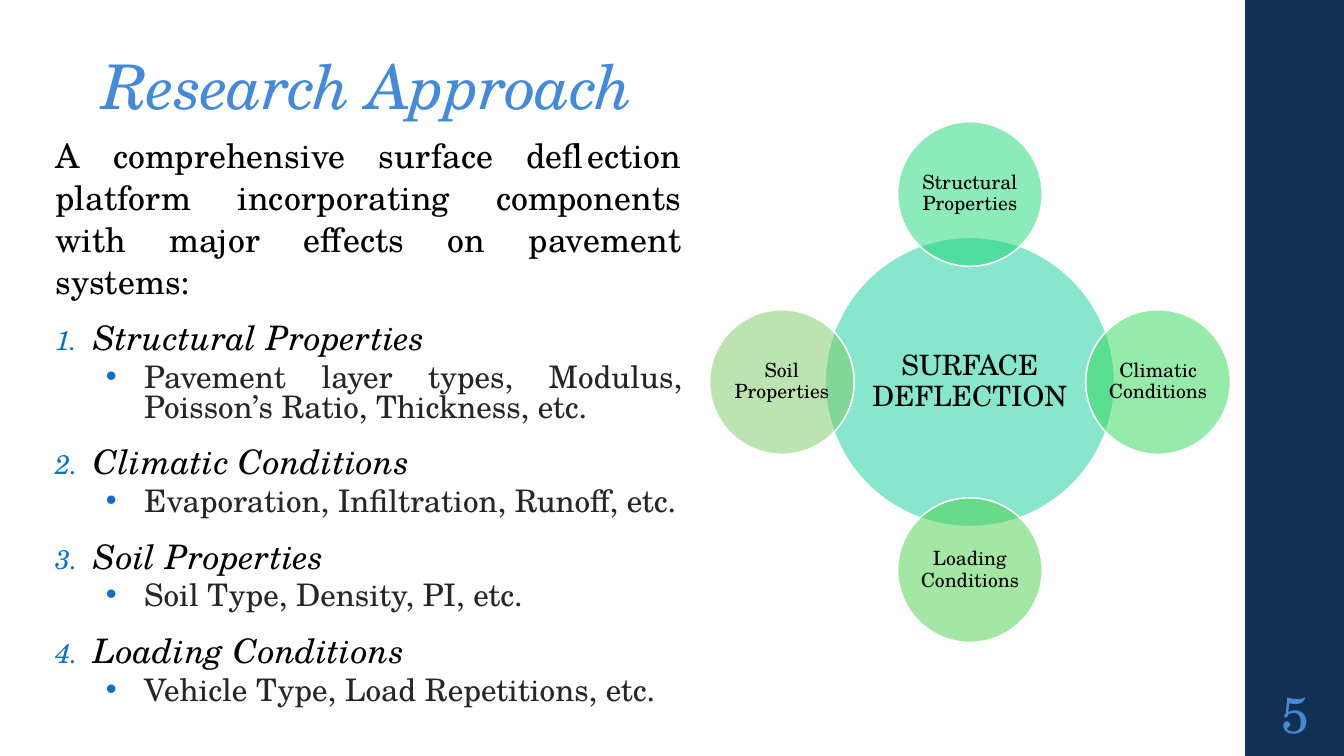
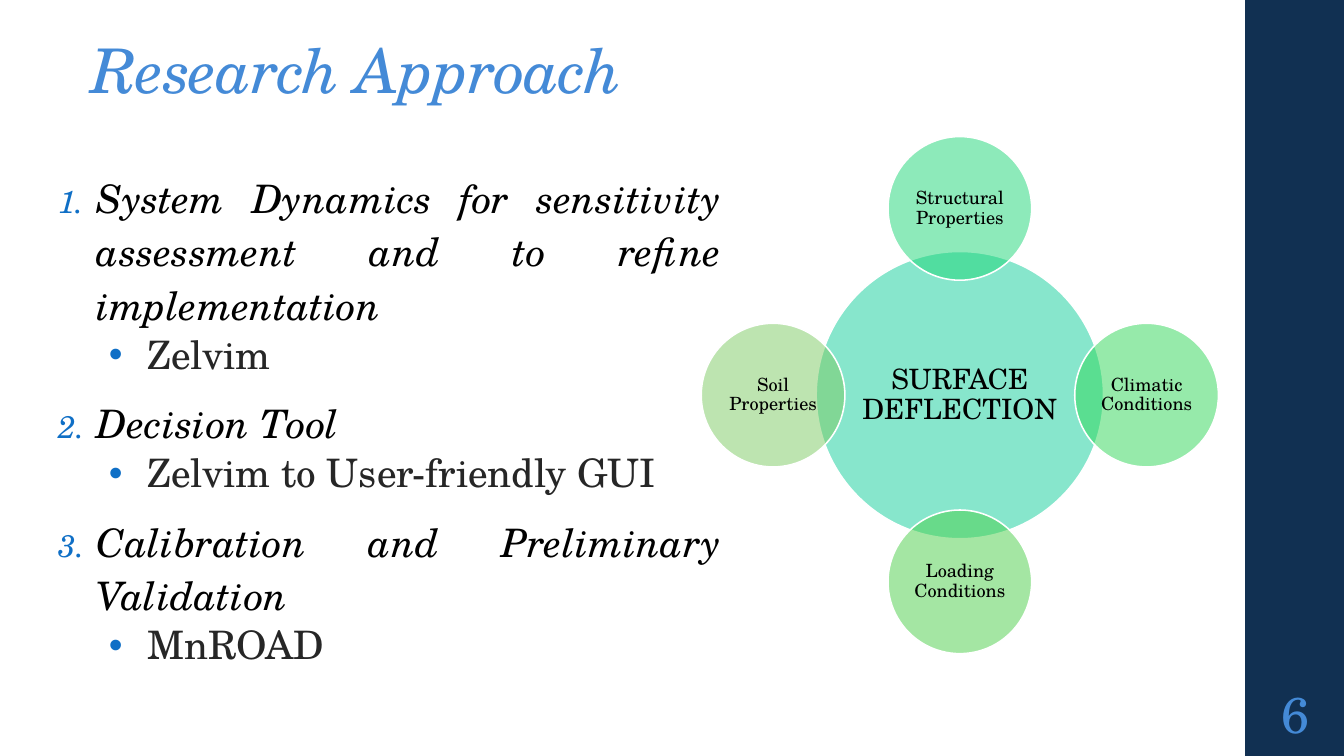
from dataclasses import dataclass
from lxml.etree import SubElement as Sub
from pptx import Presentation
from pptx.dml.color import RGBColor as RGB
from pptx.enum.shapes import MSO_SHAPE as Kind
from pptx.enum.text import MSO_ANCHOR as Anchor, MSO_AUTO_SIZE as Auto, PP_ALIGN as Align
from pptx.oxml.ns import qn
from pptx.util import Inches as In, Pt


@dataclass(frozen=True)
class Theme:
    font: str = "TeX Gyre Schola"
    band: str = "113052"
    title: str = "448AD7"
    mark: str = "0F6FC6"
    ink: str = "000000"
    soft: str = "262626"
    edge: str = "FFFFFF"
    head: float = 44
    page: float = 36
    hub: float = 20


T = Theme()
WIDE, HIGH, BAND = 13.33, 7.5, 12.35
HUB = ("SURFACE DEFLECTION", "10CF9B")
RING = [
    ("Structural Properties", "1CD676", 0, -1),
    ("Climatic Conditions", "2FD757", 1, 0),
    ("Loading Conditions", "4ACF49", 0, 1),
    ("Soil Properties", "7CCA62", -1, 0),
]
SLIDES = [
    dict(
        page="5", title="Research Approach", head=(0.92, 0.5, 5.75, 0.77),
        body=(0.45, 1.27, 6.42, 5.86), sizes=(24.1, 22.2), gaps=(1.04, 0.8),
        hub=(9.62, 3.79, 2.87), label=14,
        intro="A comprehensive surface deflection platform incorporating "
              "components with major effects on pavement systems:",
        items=[
            ("Structural Properties", "Pavement layer types, Modulus, Poisson’s Ratio, Thickness, etc."),
            ("Climatic Conditions", "Evaporation, Infiltration, Runoff, etc."),
            ("Soil Properties", "Soil Type, Density, PI, etc."),
            ("Loading Conditions", "Vehicle Type, Load Repetitions, etc."),
        ],
    ),
    dict(
        page="6", title="Research Approach", head=(0.81, 0.25, 5.75, 0.86),
        body=(0.48, 1.61, 6.78, 5.79), sizes=(28, 28), gaps=(1.14, 0.9),
        hub=(9.52, 3.92, 2.85), label=13, intro=None,
        items=[
            ("System Dynamics for sensitivity assessment and to refine implementation", "Zelvim"),
            ("Decision Tool", "Zelvim to User-friendly GUI"),
            ("Calibration and Preliminary Validation", "MnROAD"),
        ],
    ),
]


def place(shape, box):
    shape.left, shape.top, shape.width, shape.height = map(In, box)


def setup(frame, anchor, pad=None):
    frame.word_wrap = True
    frame.auto_size = Auto.NONE
    frame.vertical_anchor = anchor
    if pad is not None:
        frame.margin_left = frame.margin_right = In(pad)
        frame.margin_top = frame.margin_bottom = In(pad)


def write(para, text, size, color, slant=False, track=0):
    run = para.add_run()
    run.text = text
    font = run.font
    font.name, font.size, font.italic = T.font, Pt(size), slant
    font.color.rgb = RGB.from_string(color)
    if track:
        font._element.set("spc", str(round(track * 100)))


def paint(shape, color):
    shape.shadow.inherit = False
    shape.fill.solid()
    shape.fill.fore_color.rgb = RGB.from_string(color)
    shape.line.fill.background()


def mark(para, kind):
    props = para._p.get_or_add_pPr()
    left, hang = {"plain": (0, 0), "num": (0.38, -0.38), "dot": (0.88, -0.38)}[kind]
    props.set("marL", str(In(left)))
    props.set("indent", str(In(hang)))
    if kind == "plain":
        Sub(props, qn("a:buNone"))
        return
    Sub(Sub(props, qn("a:buClr")), qn("a:srgbClr"), val=T.mark)
    if kind == "num":
        Sub(props, qn("a:buSzPct"), val="80000")
        Sub(props, qn("a:buAutoNum"), type="arabicPeriod")
    else:
        Sub(props, qn("a:buFont"), typeface="Arial")
        Sub(props, qn("a:buChar"), char="•")


def fill(shape, data):
    place(shape, data["body"])
    frame = shape.text_frame
    setup(frame, Anchor.TOP)
    rows = [("plain", data["intro"])] if data["intro"] else []
    for name, note in data["items"]:
        rows += [("num", name), ("dot", note)]
    for i, (kind, text) in enumerate(rows):
        para = frame.add_paragraph() if i else frame.paragraphs[0]
        sub = kind == "dot"
        para.level = int(sub)
        para.alignment = Align.JUSTIFY
        para.line_spacing = data["gaps"][sub]
        para.space_before = Pt((3 if sub else 8) if i else 0)
        para.space_after = Pt(3 if sub else 2)
        mark(para, kind)
        write(para, text, data["sizes"][sub], T.soft if sub else T.ink,
              kind == "num", 0 if sub else 0.1)


def disc(slide, x, y, size, text, color, pt, pad):
    shape = slide.shapes.add_shape(
        Kind.OVAL, In(x - size / 2), In(y - size / 2), In(size), In(size))
    paint(shape, color)
    tint = shape.fill._xPr.find(qn("a:solidFill"))[0]
    Sub(tint, qn("a:alpha"), val="50000")
    shape.line.color.rgb = RGB.from_string(T.edge)
    shape.line.width = Pt(1.1)
    setup(shape.text_frame, Anchor.MIDDLE, pad)
    para = shape.text_frame.paragraphs[0]
    para.alignment, para.line_spacing = Align.CENTER, 0.9
    write(para, text, pt, T.ink)


def wheel(slide, x, y, size, pt):
    disc(slide, x, y, size, *HUB, T.hub, 0.03)
    reach = size * 0.65
    for text, color, dx, dy in RING:
        disc(slide, x + dx * reach, y + dy * reach, size / 2, text, color, pt, 0.02)


def build(deck, layout, data):
    slide = deck.slides.add_slide(layout)
    head = slide.shapes.title
    place(head, data["head"])
    setup(head.text_frame, Anchor.BOTTOM)
    para = head.text_frame.paragraphs[0]
    para.alignment, para.line_spacing = Align.LEFT, 0.9
    write(para, data["title"], T.head, T.title, True, -0.5)
    fill(slide.placeholders[1], data)
    wheel(slide, *data["hub"], data["label"])
    page = slide.shapes.add_textbox(In(BAND), In(HIGH * 0.9), In(1), In(0.65))
    setup(page.text_frame, Anchor.MIDDLE, 0.05)
    para = page.text_frame.paragraphs[0]
    para.alignment = Align.CENTER
    write(para, data["page"], T.page, T.title)
    return slide


def main():
    deck = Presentation()
    deck.slide_width, deck.slide_height = In(WIDE), In(HIGH)
    layout = deck.slide_layouts[1]
    slides = [build(deck, layout, data) for data in SLIDES]
    band = slides[0].shapes.add_shape(Kind.RECTANGLE, In(BAND), 0, In(1), In(HIGH))
    paint(band, T.band)
    layout.shapes.element.insert(2, band.element)
    deck.save("out.pptx")


if __name__ == "__main__":
    main()
